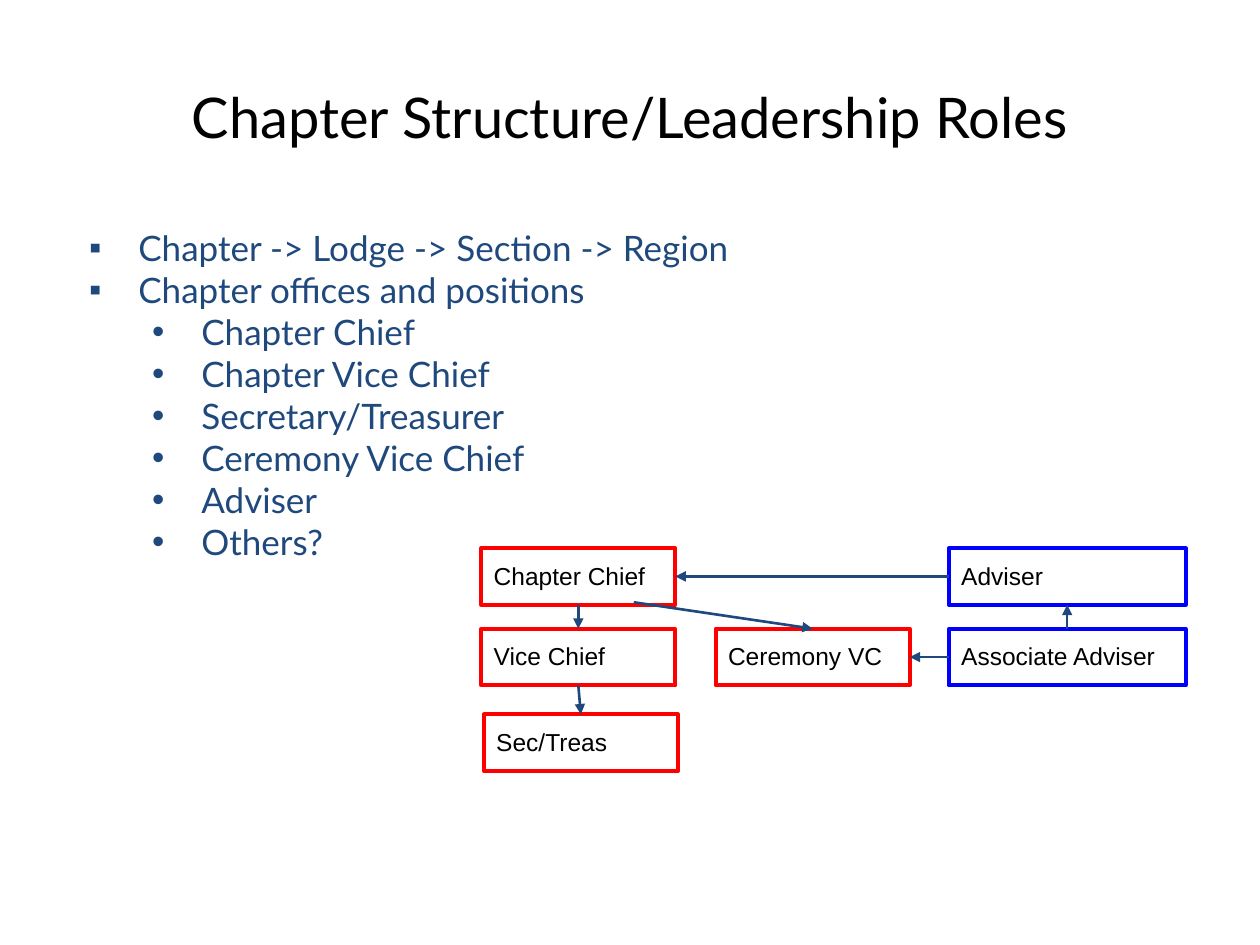
import pptx
import pptx.dml.color
import pptx.enum.shapes
import pptx.enum.text
import pptx.oxml
import pptx.oxml.ns
import pptx.util
from lxml import etree

Inches = pptx.util.Inches
Pt = pptx.util.Pt
qn = pptx.oxml.ns.qn
ANCHOR = pptx.enum.text.MSO_ANCHOR
ALIGN = pptx.enum.text.PP_ALIGN

COLORS = {"black": "000000", "navy": "1F497D", "red": "FF0000", "blue": "0000FF"}
TITLE = "Chapter Structure/Leadership Roles"
OUTLINE = [  # (level, text)
    (0, "Chapter -> Lodge -> Section -> Region"),
    (0, "Chapter offices and positions"),
    (1, "Chapter Chief"),
    (1, "Chapter Vice Chief"),
    (1, "Secretary/Treasurer"),
    (1, "Ceremony Vice Chief"),
    (1, "Adviser"),
    (1, "Others?"),
]
BULLETS = ["▪", "•"]

ROLE_HEIGHT = 0.45
ROLE_WIDTHS = {"red": 1.54, "blue": 1.88}  # youth offices, advisers
ROLES = [  # (text, outline colour, left, top)
    ("Chapter Chief", "red", 3.82, 4.35),
    ("Adviser", "blue", 7.53, 4.35),
    ("Vice Chief", "red", 3.82, 4.99),
    ("Sec/Treas", "red", 3.84, 5.67),
    ("Associate Adviser", "blue", 7.53, 4.99),
    ("Ceremony VC", "red", 5.68, 4.99),
]
TOP, LEFT, BOTTOM, RIGHT = range(4)
ARROWS = [  # (from role, side, to role, side)
    ("Adviser", LEFT, "Chapter Chief", RIGHT),
    ("Chapter Chief", BOTTOM, "Vice Chief", TOP),
    ("Vice Chief", BOTTOM, "Sec/Treas", TOP),
    ("Associate Adviser", TOP, "Adviser", BOTTOM),
    ("Associate Adviser", LEFT, "Ceremony VC", RIGHT),
    ((5.03, 4.78), None, "Ceremony VC", TOP),  # starts off-centre on the chief's box
]


def rgb(color):
    return pptx.dml.color.RGBColor.from_string(COLORS[color])


def add_bullet(paragraph, level):
    paragraph.level = level
    props = paragraph._p.get_or_add_pPr()
    props.set("marL", str(Inches(0.5 * (level + 1))))
    props.set("indent", str(Inches(-0.39)))
    bullet_color = etree.SubElement(props, qn("a:buClr"))
    etree.SubElement(bullet_color, qn("a:srgbClr"), val=COLORS["navy"])
    etree.SubElement(props, qn("a:buFont"), typeface="Arial")
    etree.SubElement(props, qn("a:buChar"), char=BULLETS[level])


def write(shape, lines, *, font, size, color="black", align=ALIGN.LEFT,
          anchor=ANCHOR.TOP, inset=0.05, bulleted=False):
    """Fill a shape with (level, text) lines."""
    frame = shape.text_frame
    frame.word_wrap = True
    frame.vertical_anchor = anchor
    frame.margin_left = frame.margin_right = Inches(0.1)
    frame.margin_top = frame.margin_bottom = Inches(inset)
    for number, (level, text) in enumerate(lines):
        paragraph = frame.add_paragraph() if number else frame.paragraphs[0]
        paragraph.alignment = align
        if bulleted:
            add_bullet(paragraph, level)
        run = paragraph.add_run()
        run.text = text
        run.font.name = font
        run.font.size = Pt(size)
        run.font.color.rgb = rgb(color)


def add_role(slide, text, color, left, top):
    role = slide.shapes.add_shape(
        pptx.enum.shapes.MSO_SHAPE.RECTANGLE, Inches(left), Inches(top),
        Inches(ROLE_WIDTHS[color]), Inches(ROLE_HEIGHT))
    role.shadow.inherit = False
    role.fill.background()
    role.line.color.rgb = rgb(color)
    role.line.width = Pt(2.25)
    write(role, [(0, text)], font="Arial", size=14, inset=0.1)
    return role


def add_arrow(slide, roles, source, source_side, target, target_side):
    start = (0, 0) if source in roles else source
    arrow = slide.shapes.add_connector(
        pptx.enum.shapes.MSO_CONNECTOR.STRAIGHT,
        Inches(start[0]), Inches(start[1]), Inches(start[0]), Inches(start[1]))
    if source in roles:
        arrow.begin_connect(roles[source], source_side)
    arrow.end_connect(roles[target], target_side)
    arrow.line.color.rgb = rgb("navy")
    arrow.line.width = Pt(1.5)
    etree.SubElement(arrow.line._get_or_add_ln(), qn("a:tailEnd"), type="triangle")
    etree.SubElement(arrow._element.spPr, qn("a:effectLst"))


def main():
    deck = pptx.Presentation()
    deck.slide_width, deck.slide_height = Inches(10), Inches(7.5)
    slide = deck.slides.add_slide(deck.slide_layouts[6])

    title = slide.shapes.add_textbox(Inches(0.5), Inches(0.3), Inches(9), Inches(1.25))
    write(title, [(0, TITLE)], font="Lato", size=32, align=ALIGN.CENTER,
          anchor=ANCHOR.MIDDLE)
    outline = slide.shapes.add_textbox(Inches(0.5), Inches(1.75), Inches(9), Inches(4.95))
    write(outline, OUTLINE, font="Lato", size=20, color="navy", bulleted=True)

    roles = {role[0]: add_role(slide, *role) for role in ROLES}
    for arrow in ARROWS:
        add_arrow(slide, roles, *arrow)
    deck.save("out.pptx")


if __name__ == "__main__":
    main()
